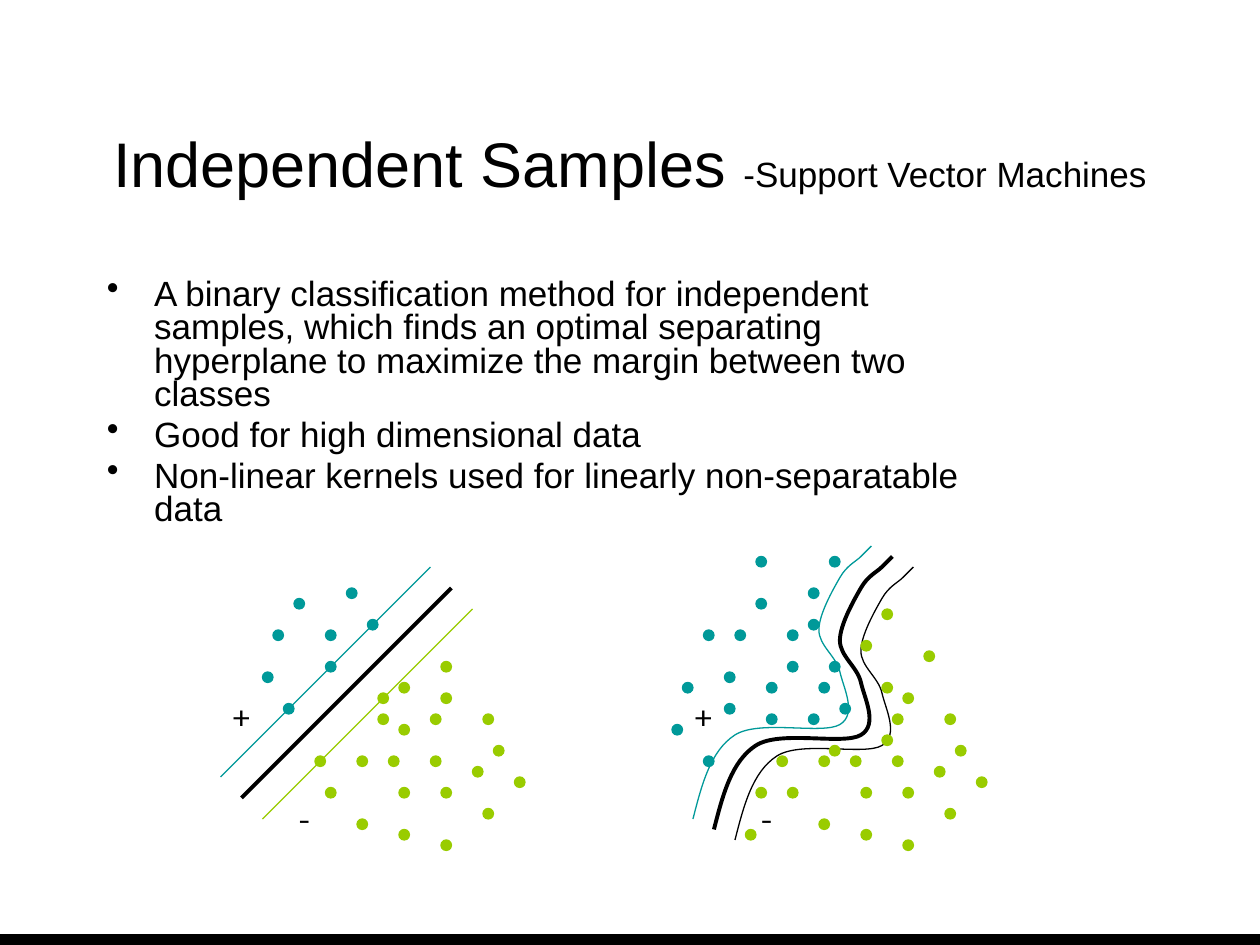
import lxml.etree
import pptx
import pptx.dml.color
import pptx.enum.shapes
import pptx.enum.text
import pptx.oxml.ns
import pptx.util

COLORS = {"black": "000000", "positive": "009999", "negative": "99CC00"}
CELL = pptx.util.Inches(1) // 12
THIN, THICK = 0.75, 2.25

BULLETS = [
    "A binary classification method for independent samples, which finds an optimal "
    "separating hyperplane to maximize the margin between two classes",
    "Good for high dimensional data",
    "Non-linear kernels used for linearly non-separatable data",
]

LINEAR_POSITIVE = [(33, 56), (28, 57), (35, 59), (26, 60), (31, 60), (31, 63), (25, 64), (27, 67)]
LINEAR_NEGATIVE = [
    (42, 63), (38, 65), (36, 66), (42, 66), (36, 68), (41, 68), (46, 68), (38, 69),
    (47, 71), (30, 72), (34, 72), (37, 72), (41, 72), (45, 73), (49, 74), (31, 75),
    (38, 75), (42, 75), (46, 77), (34, 78), (38, 79), (42, 80),
]
CURVED_POSITIVE = [
    (72, 53), (79, 53), (77, 56), (72, 57), (77, 59), (67, 60), (70, 60), (75, 60),
    (75, 63), (79, 63), (69, 64), (65, 65), (73, 65), (78, 65), (69, 67), (80, 67),
    (73, 68), (77, 68), (64, 69), (67, 72),
]
CURVED_NEGATIVE = [
    (84, 58), (82, 61), (88, 62), (84, 65), (86, 66), (85, 68), (90, 68), (84, 70),
    (79, 71), (91, 71), (74, 72), (78, 72), (81, 72), (85, 72), (89, 73), (93, 74),
    (72, 75), (75, 75), (82, 75), (86, 75), (90, 77), (78, 78), (71, 79), (82, 79), (86, 80),
]
CURVE_KNOTS = [(0, 0), (4, -8), (14, -9), (14, -14), (12, -18), (14, -23), (16, -25), (17, -26)]


def rgb(name):
    return pptx.dml.color.RGBColor.from_string(COLORS[name])


def set_line(shape, color, width):
    shape.line.color.rgb = rgb(color)
    shape.line.width = pptx.util.Pt(width)


def format_run(run, size, font="Arial"):
    run.font.size = pptx.util.Pt(size)
    run.font.name = font
    run.font.color.rgb = rgb("black")


def add_text_box(shapes, left, top, width, height, wrap=True):
    frame = shapes.add_textbox(*(round(CELL * n) for n in (left, top, width, height))).text_frame
    frame.word_wrap = wrap
    return frame


def add_filled(shapes, kind, left, top, width, height, color):
    shape = shapes.add_shape(kind, *(round(CELL * n) for n in (left, top, width, height)))
    shape.shadow.inherit = False
    shape.fill.solid()
    shape.fill.fore_color.rgb = rgb(color)
    set_line(shape, color, THIN)


def add_title(slide):
    frame = add_text_box(slide.shapes, 9, 8, 102, 15)
    frame.vertical_anchor = pptx.enum.text.MSO_ANCHOR.MIDDLE
    paragraph = frame.paragraphs[0]
    paragraph.alignment = pptx.enum.text.PP_ALIGN.CENTER
    for text, size in (("Independent Samples ", 36), ("-Support Vector Machines", 20)):
        run = paragraph.add_run()
        run.text = text
        format_run(run, size)


def add_bullets(slide):
    frame = add_text_box(slide.shapes, 9, 26, 86.5, 28.5)
    frame.text = "\n".join(BULLETS)
    for paragraph in frame.paragraphs:
        paragraph.line_spacing = 0.8
        paragraph.space_before = pptx.util.Pt(4)
        format_run(paragraph.runs[0], 20)
        properties = paragraph._p.get_or_add_pPr()
        indent = pptx.util.Inches(0.375)
        properties.set("marL", str(indent))
        properties.set("indent", str(-indent))
        bullet = lxml.etree.SubElement(properties, pptx.oxml.ns.qn("a:buChar"))
        bullet.set("char", "•")


def add_dots(shapes, cells, color):
    kind = pptx.enum.shapes.MSO_SHAPE.FLOWCHART_CONNECTOR
    for column, row in cells:
        add_filled(shapes, kind, column, row, 1, 1, color)


def add_sign(shapes, column, row, sign):
    frame = add_text_box(shapes, column, row, 6, 4, wrap=False)
    frame.vertical_anchor = pptx.enum.text.MSO_ANCHOR.MIDDLE
    frame.text = sign
    frame.paragraphs[0].alignment = pptx.enum.text.PP_ALIGN.CENTER
    format_run(frame.paragraphs[0].runs[0], 18, "Karla")


def add_straight_boundary(shapes, column, row, color, width):
    ends = (column, row, column + 20, row - 20)
    connector = shapes.add_connector(
        pptx.enum.shapes.MSO_CONNECTOR.STRAIGHT, *(CELL * n for n in ends))
    set_line(connector, color, width)
    lxml.etree.SubElement(connector._element.spPr, pptx.oxml.ns.qn("a:effectLst"))


def spline_points(knots):
    def tangent(index):
        before, after = knots[index - 1], knots[index + 1]
        return [(after[axis] - before[axis]) / 6 for axis in (0, 1)]

    def midpoint(first, second):
        return tuple((a + b) / 2 for a, b in zip(first, second))

    points = []
    last = len(knots) - 1
    for index in range(last):
        start, end = knots[index], knots[index + 1]
        if index > 0:
            leaving = tuple(k + t for k, t in zip(start, tangent(index)))
        if index + 1 < last:
            arriving = tuple(k - t for k, t in zip(end, tangent(index + 1)))
        else:
            arriving = midpoint(leaving, end)
        if index == 0:
            leaving = midpoint(start, arriving)
        points += [leaving, arriving, end]
    return points


def add_curved_boundary(shapes, column, row, color, width):
    knots = [(CELL * (column + x), CELL * (row + y)) for x, y in CURVE_KNOTS]
    builder = shapes.build_freeform(*knots[0])
    builder.add_line_segments(spline_points(knots), close=False)
    shape = builder.convert_to_shape()
    shape.shadow.inherit = False
    shape.fill.background()
    set_line(shape, color, width)
    segments = list(shape._element.iter(pptx.oxml.ns.qn("a:lnTo")))
    outline = segments[0].getparent()
    for start in range(0, len(segments), 3):
        curve = lxml.etree.SubElement(outline, pptx.oxml.ns.qn("a:cubicBezTo"))
        for segment in segments[start:start + 3]:
            curve.append(segment[0])
            outline.remove(segment)


def add_diagram(slide, add_boundary, boundaries, positive, negative, sign_column):
    shapes = slide.shapes.add_group_shape().shapes
    for boundary in boundaries:
        add_boundary(shapes, *boundary)
    add_dots(shapes, positive, "positive")
    add_dots(shapes, negative, "negative")
    add_sign(shapes, sign_column, 66, "+")
    add_sign(shapes, sign_column + 6, 76, "-")


def main():
    presentation = pptx.Presentation()
    presentation.slide_width = CELL * 120
    presentation.slide_height = CELL * 90
    slide = presentation.slides.add_slide(presentation.slide_layouts[6])
    add_filled(slide.shapes, pptx.enum.shapes.MSO_SHAPE.RECTANGLE, 0, 89, 120, 1, "black")
    add_title(slide)
    add_bullets(slide)
    add_diagram(
        slide, add_straight_boundary,
        [(21, 74, "positive", THIN), (23, 76, "black", THICK), (25, 78, "negative", THIN)],
        LINEAR_POSITIVE, LINEAR_NEGATIVE, 20)
    add_diagram(
        slide, add_curved_boundary,
        [(66, 78, "positive", THIN), (68, 79, "black", THICK), (70, 80, "black", THIN)],
        CURVED_POSITIVE, CURVED_NEGATIVE, 64)
    presentation.save("out.pptx")


if __name__ == "__main__":
    main()
